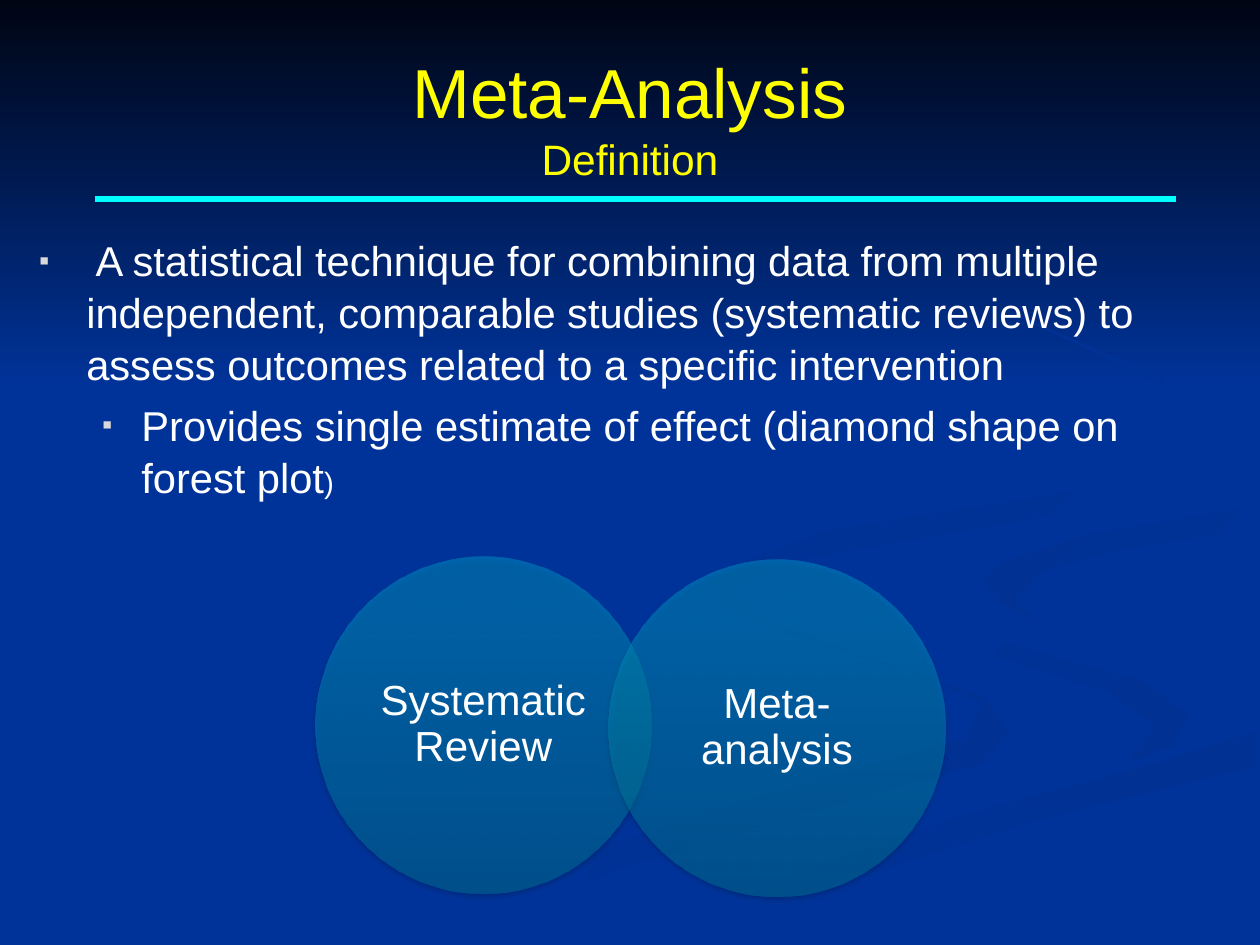
from dataclasses import dataclass

from lxml import etree
from pptx import Presentation
from pptx import util as u
from pptx.dml.color import RGBColor
from pptx.enum import shapes, text
from pptx.oxml.ns import qn

Pt = u.Pt
FONT = "Arial"
COLORS = {
    "night": "000514",
    "field": "003399",
    "swirl": "003193",
    "rule": "00FFFF",
    "title": "FFFF00",
    "body": "FFFFFF",
    "bullet": "D9D9D9",
    "circle_low": "007298",
    "circle_high": "0095C7",
    "shadow": "000000",
}


@dataclass(frozen=True)
class Swirl:
    start: str
    end: str
    angle: int
    outline: tuple


@dataclass(frozen=True)
class Circle:
    label: str
    left: float
    top: float


@dataclass(frozen=True)
class Point:
    words: str
    level: int
    margin: float
    indent: float


SWIRLS = (
    Swirl("field", "swirl", 0, (
        (562, 398), (491, 374), (428, 350), (414, 331), (411, 343), (440, 359),
        (526, 386), (562, 402), (552, 422), (417, 460), (300, 498), (216, 539),
        (260, 539), (359, 495), (487, 457), (562, 436), (576, 418))),
    Swirl("field", "swirl", 45, (
        (679, 408), (652, 389), (570, 366), (521, 334), (528, 352), (562, 373),
        (634, 396), (660, 415), (644, 436), (671, 426))),
    Swirl("swirl", "field", 90, (
        (362, 539), (411, 539), (500, 498), (591, 469), (718, 438), (718, 418),
        (650, 439), (550, 466), (454, 499))),
    Swirl("swirl", "field", 45, (
        (562, 331), (570, 344), (595, 357), (580, 343), (596, 326), (645, 313),
        (718, 302), (718, 289), (623, 305), (570, 322))),
    Swirl("swirl", "field", 45, (
        (500, 312), (655, 285), (691, 253), (664, 216), (572, 176), (669, 222),
        (684, 256), (644, 276), (469, 304), (405, 330), (445, 360), (419, 339),
        (446, 322))),
)
CIRCLES = (
    Circle("Systematic Review", 180, 318),
    Circle("Meta-analysis", 347.8, 319.8),
)
POINTS = (
    Point(" A statistical technique for combining data from multiple independent, "
          "comparable studies (systematic reviews) to assess outcomes related to a "
          "specific intervention", 0, 27, -27),
    Point("Provides single estimate of effect (diamond shape on forest plot", 1, 58.5, -22.5),
)
DIAMETER = 192.4
LABEL_INSET = 28.2


def rgb(name: str) -> RGBColor:
    return RGBColor.from_string(COLORS[name])


def place(part, left: float, top: float, width: float, height: float) -> None:
    part.left, part.top, part.width, part.height = map(Pt, (left, top, width, height))


def set_font(font, size: float, color: str) -> None:
    font.name, font.size = FONT, Pt(size)
    font.color.rgb = rgb(color)


def fill_gradient(part, start: str, end: str, angle: int, reach: float = 1) -> None:
    part.fill.gradient()
    part.fill.gradient_angle = (360 - angle) % 360
    for stop, color, position in zip(part.fill.gradient_stops, (start, end), (0, reach)):
        stop.color.rgb = rgb(color)
        stop.position = position
    part.line.fill.background()
    part.shadow.inherit = False


def draw_night_sky(slide) -> None:
    sky = slide.shapes.add_shape(shapes.MSO_SHAPE.RECTANGLE, 0, 0, Pt(720), Pt(221.8))
    fill_gradient(sky, "night", "field", 90)


def draw_swirl(slide, swirl: Swirl) -> None:
    builder = slide.shapes.build_freeform(*swirl.outline[0], scale=Pt(1))
    builder.add_line_segments(swirl.outline[1:], close=True)
    fill_gradient(builder.convert_to_shape(), swirl.start, swirl.end, swirl.angle)


def draw_rule(slide) -> None:
    rule = slide.shapes.add_connector(
        shapes.MSO_CONNECTOR.STRAIGHT, Pt(54), Pt(113.8), Pt(672), Pt(113.8))
    rule.line.color.rgb = rgb("rule")
    rule.line.width = Pt(3.5)
    etree.SubElement(rule._element.spPr, qn("a:effectLst"))


def write_title(title) -> None:
    place(title, 36, 21.6, 648, 90)
    frame = title.text_frame
    frame.auto_size = text.MSO_AUTO_SIZE.NONE
    frame.vertical_anchor = text.MSO_ANCHOR.MIDDLE
    heading = frame.paragraphs[0]
    heading.alignment = text.PP_ALIGN.CENTER
    topic = heading.add_run()
    topic.text = "Meta-Analysis"
    set_font(topic.font, 39.6, "title")
    heading.add_line_break()
    aspect = heading.add_run()
    aspect.text = "Definition"
    set_font(aspect.font, 24.3, "title")


def set_bullet(paragraph, margin: float, indent: float) -> None:
    properties = paragraph._p.get_or_add_pPr()
    properties.set("marL", str(Pt(margin)))
    properties.set("indent", str(Pt(indent)))
    tint = etree.SubElement(properties, qn("a:buClr"))
    etree.SubElement(tint, qn("a:srgbClr"), val=COLORS["bullet"])
    etree.SubElement(properties, qn("a:buSzPct"), val="70000")
    etree.SubElement(properties, qn("a:buFont"), typeface=FONT)
    etree.SubElement(properties, qn("a:buChar"), char="▪")


def write_body(body) -> None:
    place(body, 15.1, 129.6, 648, 167.8)
    frame = body.text_frame
    frame.auto_size = text.MSO_AUTO_SIZE.NONE
    for index, point in enumerate(POINTS):
        paragraph = frame.add_paragraph() if index else frame.paragraphs[0]
        paragraph.level = point.level
        paragraph.line_spacing = 1.04
        set_bullet(paragraph, point.margin, point.indent)
        words = paragraph.add_run()
        words.text = point.words
        set_font(words.font, 23.8, "body")
    bracket = paragraph.add_run()
    bracket.text = ")"
    set_font(bracket.font, 16.8, "body")


def draw_circle(slide, circle: Circle) -> None:
    disc = slide.shapes.add_shape(
        shapes.MSO_SHAPE.OVAL, Pt(circle.left), Pt(circle.top), Pt(DIAMETER), Pt(DIAMETER))
    fill_gradient(disc, "circle_low", "circle_high", 270, 0.8)
    properties = disc._element.spPr
    for tint in properties.iter(qn("a:srgbClr")):
        etree.SubElement(tint, qn("a:alpha"), val="50000")
    shadow = etree.SubElement(
        properties.find(qn("a:effectLst")), qn("a:outerShdw"),
        blurRad=str(Pt(3.1)), dist=str(Pt(1.8)), dir="5400000", rotWithShape="0")
    shade = etree.SubElement(shadow, qn("a:srgbClr"), val=COLORS["shadow"])
    etree.SubElement(shade, qn("a:alpha"), val="35000")

    side = DIAMETER - 2 * LABEL_INSET
    label = slide.shapes.add_textbox(
        Pt(circle.left + LABEL_INSET), Pt(circle.top + LABEL_INSET), Pt(side), Pt(side))
    frame = label.text_frame
    frame.word_wrap = True
    frame.vertical_anchor = text.MSO_ANCHOR.MIDDLE
    frame.margin_left = frame.margin_right = frame.margin_top = frame.margin_bottom = Pt(7.2)
    paragraph = frame.paragraphs[0]
    paragraph.text = circle.label
    paragraph.alignment = text.PP_ALIGN.CENTER
    paragraph.line_spacing = 0.9
    set_font(paragraph.font, 24, "body")


def main() -> None:
    deck = Presentation()
    deck.slide_width, deck.slide_height = Pt(720), Pt(540)
    slide = deck.slides.add_slide(deck.slide_layouts[1])
    slide.background.fill.solid()
    slide.background.fill.fore_color.rgb = rgb("field")
    draw_night_sky(slide)
    for swirl in SWIRLS:
        draw_swirl(slide, swirl)
    draw_rule(slide)
    write_title(slide.shapes.title)
    write_body(slide.placeholders[1])
    for placeholder in (slide.shapes.title, slide.placeholders[1]):
        slide.shapes._spTree.append(placeholder._element)
    for circle in CIRCLES:
        draw_circle(slide, circle)
    deck.save("out.pptx")


if __name__ == "__main__":
    main()
